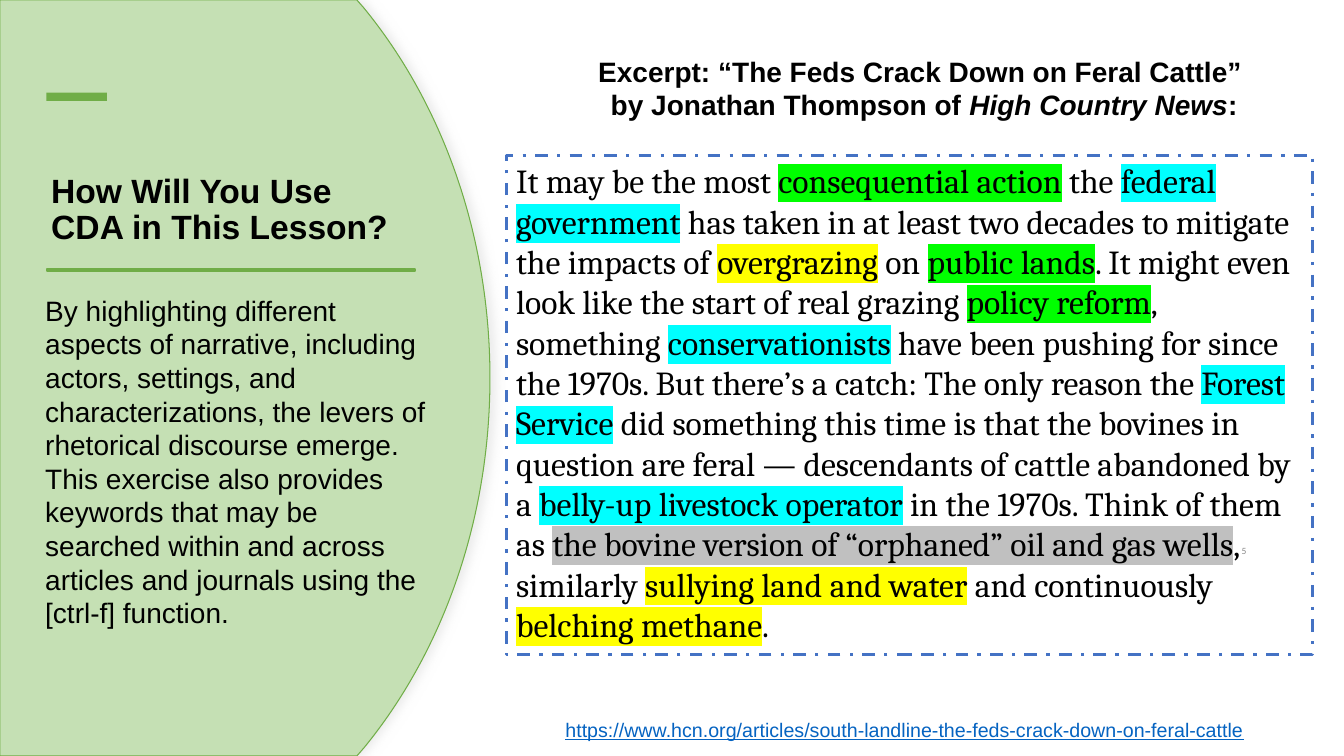
import pptx
import pptx.util
import pptx.dml.color
import pptx.enum.dml
import pptx.enum.shapes
import pptx.enum.text
import pptx.oxml
import pptx.oxml.ns

Inches = pptx.util.Inches
Pt = pptx.util.Pt
ALIGN = pptx.enum.text.PP_ALIGN
ANCHOR = pptx.enum.text.MSO_ANCHOR
GROW = pptx.enum.text.MSO_AUTO_SIZE.SHAPE_TO_FIT_TEXT
NS = pptx.oxml.ns.nsdecls("a")
GREEN, CYAN, YELLOW, GRAY = "00FF00", "00FFFF", "FFFF00", "C0C0C0"
ACCENT = "70AD47"

EXCERPT = [
    ("It may be the most ", None), ("consequential action", GREEN),
    (" the ", None), ("federal government", CYAN),
    (" has taken in at least two decades to mitigate the impacts of ", None),
    ("overgrazing", YELLOW), (" on ", None), ("public lands", GREEN),
    (". It might even look like the start of real grazing ", None),
    ("policy reform", GREEN), (", something ", None),
    ("conservationists", CYAN),
    (" have been pushing for since the 1970s. But there’s a catch: "
     "The only reason the ", None), ("Forest Service", CYAN),
    (" did something this time is that the bovines in question are feral — "
     "descendants of cattle abandoned by a ", None),
    ("belly-up livestock operator", CYAN),
    (" in the 1970s. Think of them as ", None),
    ("the bovine version of “orphaned” oil and gas wells", GRAY),
    (", similarly ", None), ("sullying land and water", YELLOW),
    (" and continuously ", None), ("belching methane", YELLOW), (".", None),
]


def color(code):
    return pptx.dml.color.RGBColor.from_string(code)


def add_run(para, text, size=20, font="Arial", ink="000000", bold=False,
            slant=False, under=False, mark=None):
    run = para.add_run()
    run.text = text
    run.font.size = Pt(size)
    run.font.name = font
    run.font.bold = bold
    run.font.italic = slant
    run.font.underline = under
    run.font.color.rgb = color(ink)
    if mark:
        fill = run._r.rPr.find(pptx.oxml.ns.qn("a:solidFill"))
        fill.addnext(pptx.oxml.parse_xml(
            f'<a:highlight {NS}><a:srgbClr val="{mark}"/></a:highlight>'))


def set_frame(shape, align=ALIGN.LEFT, anchor=ANCHOR.TOP, indent=0,
              grow=True):
    frame = shape.text_frame
    frame.word_wrap = True
    frame.vertical_anchor = anchor
    if grow:
        frame.auto_size = GROW
    para = frame.paragraphs[0]
    para.alignment = align
    if indent:
        para._p.get_or_add_pPr().set("marL", str(Inches(indent)))
    return para


def add_text(slide, box, text, align=ALIGN.LEFT, anchor=ANCHOR.TOP,
             indent=0, grow=True, space=None, after=None, **style):
    shape = slide.shapes.add_textbox(*map(Inches, box))
    para = set_frame(shape, align, anchor, indent, grow)
    para.line_spacing = space
    if after:
        para.space_after = Pt(after)
    add_run(para, text, **style)
    return para


def paint(shape, fill=None, line=None, width=0.75):
    shape.shadow.inherit = False
    if fill:
        shape.fill.solid()
        shape.fill.fore_color.rgb = color(fill)
    else:
        shape.fill.background()
    if line:
        shape.line.color.rgb = color(line)
        shape.line.width = Pt(width)
    else:
        shape.line.fill.background()
    return shape


def add_rect(slide, box, **look):
    kind = pptx.enum.shapes.MSO_SHAPE.RECTANGLE
    return paint(slide.shapes.add_shape(kind, *map(Inches, box)), **look)


def bend(edge, points):
    dots = "".join(f'<a:pt x="{Inches(x)}" y="{Inches(y)}"/>'
                   for x, y in points)
    edge.getparent().replace(edge, pptx.oxml.parse_xml(
        f"<a:cubicBezTo {NS}>{dots}</a:cubicBezTo>"))


def add_panel(slide, box, **look):
    left, top, width, height = box
    neck, edge, mid = width - 1.25, width - 1.32, height / 2
    points = [(edge, 0), (neck, 0.08), (width, mid),
              (neck, height - 0.08), (edge, height), (0, height)]
    form = slide.shapes.build_freeform(0, 0)
    form.add_line_segments([(Inches(x), Inches(y)) for x, y in points])
    shape = form.convert_to_shape(Inches(left), Inches(top))
    sides = list(shape._element.iter(pptx.oxml.ns.qn("a:lnTo")))
    pull = width - 0.48
    bend(sides[2], [(pull, 1.02), (width, 2.32), (width, mid)])
    bend(sides[3], [(width, height - 2.32), (pull, height - 1.02),
                    (neck, height - 0.08)])
    return paint(shape, **look)


def add_side(slide, box):
    left, top, width, height = box
    back = add_panel(slide, (left, top, width + 0.01, height),
                     fill="E6F2E1", line="EFEFEF")
    glow = back._element.spPr.find(pptx.oxml.ns.qn("a:effectLst"))
    glow.append(pptx.oxml.parse_xml(
        f'<a:outerShdw {NS} blurRad="{Pt(7)}" dist="{Pt(3)}" dir="0">'
        '<a:srgbClr val="D9D9D9"><a:alpha val="50000"/></a:srgbClr>'
        '</a:outerShdw>'))
    add_panel(slide, box, fill="C5E0B4", line=ACCENT)
    add_text(slide, (left + 0.41, top + 1.27, 3.76, 1.23),
             "How Will You Use CDA in This Lesson?", anchor=ANCHOR.BOTTOM,
             grow=False, space=0.9, size=24, bold=True)
    dash = add_rect(slide, (left + 0.72, top + 0.66, 0.08, 0.6), fill=ACCENT)
    dash.rotation = 90
    add_rect(slide, (left + 0.47, top + 2.67, 3.65, 0.02), fill=ACCENT,
             line=ACCENT, width=1.5)
    add_text(slide, (left - 0.15, top + 2.86, 4.55, 3.47),
             "By highlighting different aspects of narrative, including "
             "actors, settings, and characterizations, the levers of "
             "rhetorical discourse emerge. This exercise also provides "
             "keywords that may be searched within and across articles and "
             "journals using the [ctrl-f] function.", indent=0.5)


def add_main(slide, box):
    left, top, width, height = box
    add_text(slide, (left + 5.71, top + 5.35, 1.73, 0.23), "5",
             align=ALIGN.RIGHT, anchor=ANCHOR.MIDDLE, grow=False, after=6,
             size=6.8, font="Calibri", ink="888888")
    head = add_text(slide, (left + 0.16, top + 0.49, 7.69, 0.86),
                    "Excerpt: “The Feds Crack Down on Feral Cattle” ",
                    align=ALIGN.CENTER, indent=0.28, after=6, bold=True)
    head.add_line_break()
    add_run(head, "by Jonathan Thompson of ", bold=True)
    add_run(head, "High Country News", bold=True, slant=True)
    add_run(head, ":", bold=True)
    add_text(slide, (left + 0.49, top + 7.07, 7.07, 0.42),
             "https://www.hcn.org/articles/"
             "south-landline-the-feds-crack-down-on-feral-cattle",
             after=6, size=14, ink="0563C1", under=True)
    frame = add_rect(slide, (left, top + 1.54, width, 4.95),
                     line="4472C4", width=2.25)
    frame.line.dash_style = pptx.enum.dml.MSO_LINE.DASH_DOT
    para = set_frame(frame)
    for text, mark in EXCERPT:
        add_run(para, text, size=24, font="Cambria", mark=mark)


def main():
    deck = pptx.Presentation()
    deck.slide_width, deck.slide_height = Inches(13.33), Inches(7.5)
    slide = deck.slides.add_slide(deck.slide_layouts[6])
    add_side(slide, (0, 0, 4.86, 7.5))
    add_main(slide, (5.02, 0, 8, 7.5))
    deck.save("out.pptx")


if __name__ == "__main__":
    main()
